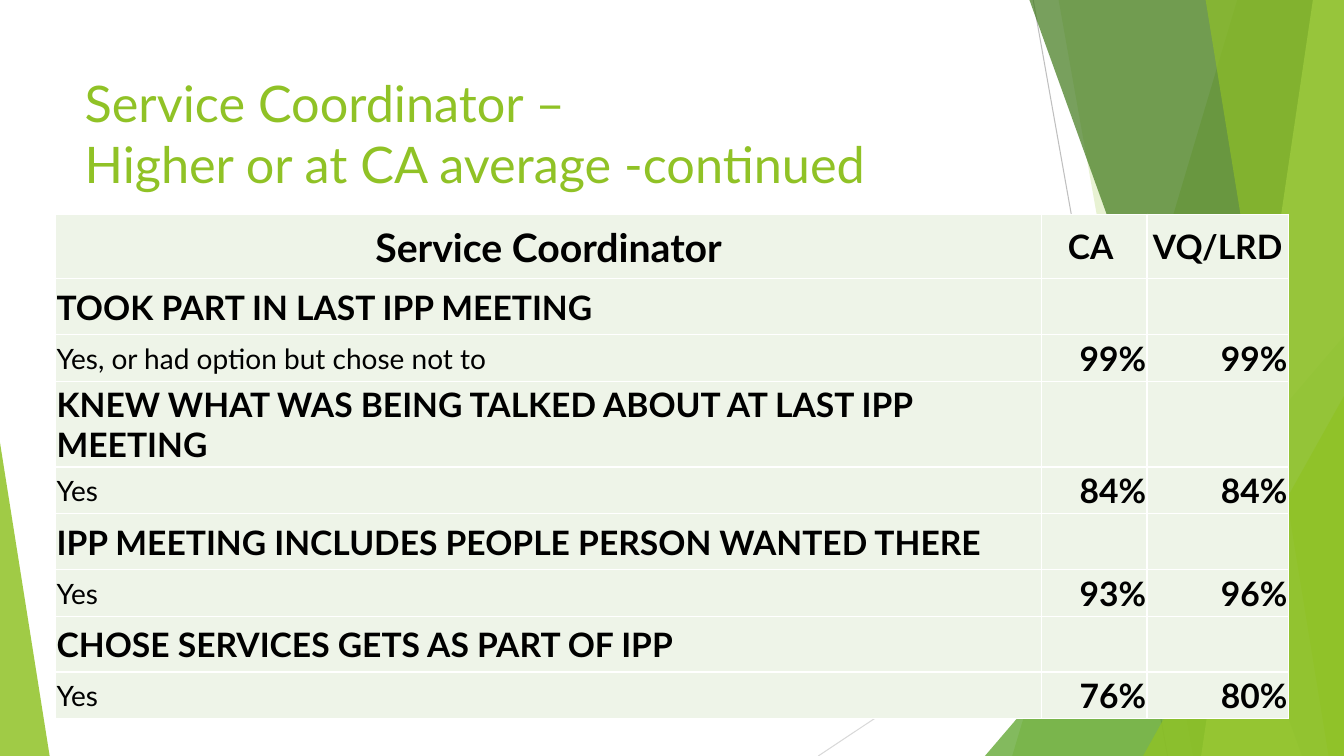
from lxml import etree
from pptx import Presentation
from pptx.dml.color import RGBColor
from pptx.enum import shapes, text
from pptx.oxml.ns import qn
from pptx.util import Pt

THEME = {
    "font": "Lato",
    "green": "90C226", "leaf": "54A021", "forest": "3F7819", "lime": "C0E474",
    "line": "BFBFBF", "pale_line": "D9D9D9",
    "cell": "EEF4E8", "border": "FFFFFF", "ink": "000000",
    "title": 36, "header": 28, "strong": 24, "answer": 20,
}
W, H = 960, 540


def color(name):
    return RGBColor.from_string(THEME[name])


def style_font(font, size, name, bold):
    font.name = THEME["font"]
    font.size = Pt(THEME[size])
    font.color.rgb = color(name)
    font.bold = bold


prs = Presentation()
prs.slide_width, prs.slide_height = Pt(W), Pt(H)
s = prs.slides.add_slide(prs.slide_layouts[5])

for x1, y1, x2, y2, name in [(738, 0, 834, H, "line"), (W, 290, 584.5, H, "pale_line")]:
    line = s.shapes.add_connector(shapes.MSO_CONNECTOR.STRAIGHT, Pt(x1), Pt(y1), Pt(x2), Pt(y2))
    line.line.color.rgb = color(name)
    line.line.width = Pt(0.75)
    etree.SubElement(line.element.spPr, qn("a:effectLst"))

facets = [
    ("band", (884, 723), "green", 30),
    ("band", (756, 852), "green", 20),
    ("triangle", (703.5, 240, W - 703.5, 1), "leaf", 72),
    ("band", (735, 929.5), "forest", 70),
    ("band", (938, 858), "lime", 70),
    ("band", (861, 949), "green", 65),
    ("triangle", (816.5, 283, W - 816.5, 1), "green", 80),
    ("triangle", (0, 316, 35.5, 0), "green", 85),
]
for kind, place, name, opacity in facets:
    if kind == "band":
        top_x, bottom_x = place
        outline = s.shapes.build_freeform(top_x, -0.6, scale=Pt(1))
        outline.add_line_segments([(W, -0.6), (W, H), (bottom_x, H)], close=True)
        sp = outline.convert_to_shape()
    else:
        x, y, width, apex = place
        sp = s.shapes.add_shape(shapes.MSO_SHAPE.ISOSCELES_TRIANGLE,
                                Pt(x), Pt(y), Pt(width), Pt(H - y))
        sp.adjustments[0] = apex
    sp.shadow.inherit = False
    sp.line.fill.background()
    sp.fill.solid()
    sp.fill.fore_color.rgb = color(name)
    rgb = sp.element.spPr.find(qn("a:solidFill")).find(qn("a:srgbClr"))
    etree.SubElement(rgb, qn("a:alpha"), val=str(opacity * 1000))

title = s.shapes.title
s.shapes.element.append(title.element)
title.left, title.top, title.width, title.height = Pt(53.3), Pt(48), Pt(677), Pt(104)
tf = title.text_frame
tf.text = "Service Coordinator – \vHigher or at CA average -continued"
tf.word_wrap = True
tf.auto_size = text.MSO_AUTO_SIZE.NONE
tf.vertical_anchor = text.MSO_ANCHOR.TOP
p = tf.paragraphs[0]
p.alignment = text.PP_ALIGN.LEFT
style_font(p.font, "title", "green", False)

rows = [
    ("Service Coordinator", "CA ", "VQ/LRD"),
    ("TOOK PART IN LAST IPP MEETING", "", ""),
    ("Yes, or had option but chose not to", "99%", "99%"),
    ("KNEW WHAT WAS BEING TALKED ABOUT AT LAST IPP MEETING", "", ""),
    ("Yes", "84%", "84%"),
    ("IPP MEETING INCLUDES PEOPLE PERSON WANTED THERE", "", ""),
    ("Yes", "93%", "96%"),
    ("CHOSE SERVICES GETS AS PART OF IPP", "", ""),
    ("Yes", "76%", "80%"),
]
widths = [704, 75.5, 101]
heights = [46.2, 39.8, 33.4, 61.2, 33.4, 39.8, 33.4, 39.8, 33.4]
table = s.shapes.add_table(len(rows), len(widths), Pt(39.8), Pt(153),
                           Pt(sum(widths)), Pt(sum(heights))).table
table.first_row = table.horz_banding = False
for column, width in zip(table.columns, widths):
    column.width = Pt(width)
for row, height in zip(table.rows, heights):
    row.height = Pt(height)

for i, row in enumerate(rows):
    for j, words in enumerate(row):
        cell = table.cell(i, j)
        cell.fill.solid()
        cell.fill.fore_color.rgb = color("cell")
        cell.vertical_anchor = text.MSO_ANCHOR.MIDDLE
        cell.margin_left = cell.margin_right = cell.margin_top = Pt(0.7)
        cell.margin_bottom = 0
        for k, side in enumerate(["a:lnL", "a:lnR", "a:lnT", "a:lnB"]):
            border = etree.Element(qn(side), w=str(Pt(1)))
            fill = etree.SubElement(border, qn("a:solidFill"))
            etree.SubElement(fill, qn("a:srgbClr"), val=THEME["border"])
            cell._tc.get_or_add_tcPr().insert(k, border)
        if not words:
            continue
        answer = j == 0 and row[1].endswith("%")
        size = "header" if i == j == 0 else "answer" if answer else "strong"
        p = cell.text_frame.paragraphs[0]
        p.text = words
        if i == 0:
            p.alignment = text.PP_ALIGN.CENTER
        else:
            p.alignment = text.PP_ALIGN.RIGHT if j else text.PP_ALIGN.LEFT
        style_font(p.font, size, "ink", not answer)

prs.save("out.pptx")
